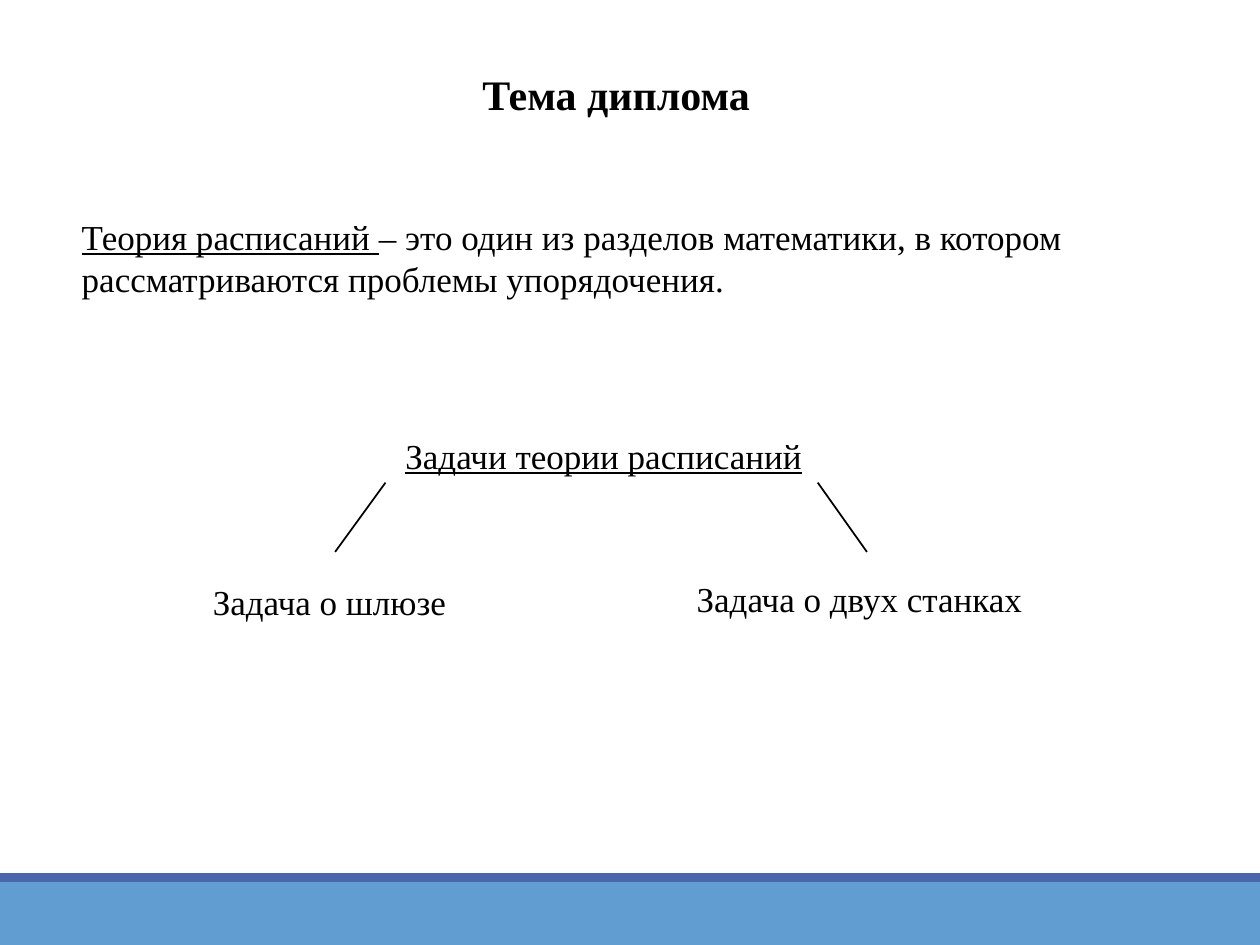
import pptx
import pptx.util
import pptx.dml.color
import pptx.enum.shapes
import pptx.enum.text
from lxml import etree
from pptx.util import Pt

# Content
FONT = "Times New Roman"
BLACK = "000000"
TITLE = "Тема диплома"

# (left, top, width, height), runs as (text, underlined)
PASSAGES = [
    ((39.6, 119.5, 625, 55.4), [
        ("Теория расписаний ", True),
        ("– это один из разделов математики, в котором "
         "рассматриваются проблемы упорядочения.", False)]),
    ((224.6, 244.8, 254.2, 31.7), [("Задачи теории расписаний", True)]),
    ((114.5, 328.3, 154.8, 31.7), [("Задача о шлюзе", False)]),
    ((391, 326.2, 208.8, 31.7), [("Задача о двух станках", False)]),
]

# Branches run from the heading down to each problem: (start x, end x)
BRANCHES = [(467.3, 495.4), (220.3, 191.5)]
BRANCH_TOP, BRANCH_BOTTOM = 275.8, 315.4

# Footer bands: (top, height, colour)
BANDS = [(504, 36, "629DD1"), (499, 5, "4A66AC")]


def rgb(colour):
    return pptx.dml.color.RGBColor.from_string(colour)


def format_run(run, size, bold=False, underline=False):
    run.font.name = FONT
    run.font.size = Pt(size)
    run.font.bold = bold
    run.font.underline = underline
    run.font.color.rgb = rgb(BLACK)


presentation = pptx.Presentation()
presentation.slide_width, presentation.slide_height = Pt(720), Pt(540)
slide = presentation.slides.add_slide(presentation.slide_layouts[5])

# Footer
for top, height, colour in BANDS:
    band = slide.shapes.add_shape(
        pptx.enum.shapes.MSO_SHAPE.RECTANGLE, 0, Pt(top), Pt(720), Pt(height))
    band.shadow.inherit = False
    band.fill.solid()
    band.fill.fore_color.rgb = rgb(colour)
    band.line.fill.background()

# Title
title = slide.shapes.title
title.left, title.top, title.width, title.height = map(Pt, (125.3, 35.3, 453.6, 36))
title.text_frame.text = TITLE
title.text_frame.vertical_anchor = pptx.enum.text.MSO_ANCHOR.TOP
title.text_frame.auto_size = pptx.enum.text.MSO_AUTO_SIZE.NONE
title_line = title.text_frame.paragraphs[0]
title_line.alignment = pptx.enum.text.PP_ALIGN.CENTER
format_run(title_line.runs[0], 24, bold=True)

# Definition, heading and problems
for place, runs in PASSAGES:
    passage = slide.shapes.add_textbox(*map(Pt, place))
    passage.text_frame.word_wrap = True
    for text, underlined in runs:
        run = passage.text_frame.paragraphs[0].add_run()
        run.text = text
        format_run(run, 20, underline=underlined)

# Branches
for start, end in BRANCHES:
    branch = slide.shapes.add_connector(
        pptx.enum.shapes.MSO_CONNECTOR.STRAIGHT,
        Pt(start), Pt(BRANCH_TOP), Pt(end), Pt(BRANCH_BOTTOM))
    branch.line.color.rgb = rgb(BLACK)
    branch.line.width = Pt(1)
    etree.SubElement(branch._element.spPr, pptx.oxml.ns.qn("a:effectLst"))

presentation.save("out.pptx")
